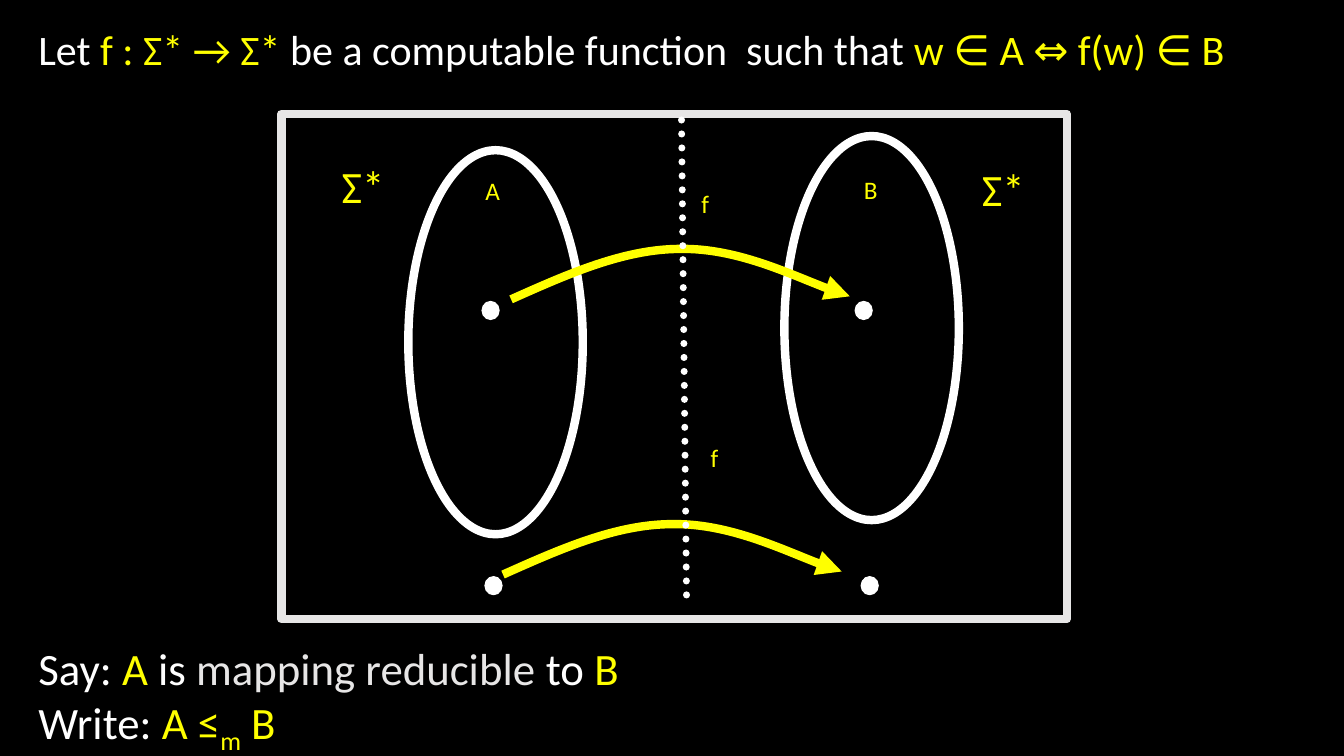
import lxml.etree
import pptx
import pptx.dml.color
import pptx.enum.dml
import pptx.enum.shapes
import pptx.enum.text
import pptx.oxml.ns
import pptx.util

COLORS = {"black": "000000", "white": "FFFFFF", "yellow": "FFFF00", "gray": "E7E6E6"}
FONT = "Calibri"
LINE_WIDTH = 6
DOT_SIZE = (1.28, 2.4)
OVAL_SIZE = (12.98, 50.8)
# Bezier control points of a mapping arrow, relative to its start.
ARC = [(4.2, -3.33), (8.4, -6.67), (12.6, -6.67),
       (16.8, -6.8), (23.1, -1.47), (25.2, -0.4)]
LABEL_FORMAT = {"word_wrap": False}
BLOCK_FORMAT = {
    "word_wrap": True,
    "auto_size": pptx.enum.text.MSO_AUTO_SIZE.NONE,
    "vertical_anchor": pptx.enum.text.MSO_ANCHOR.TOP,
}
LEFT = pptx.enum.text.PP_ALIGN.LEFT
CENTER = pptx.enum.text.PP_ALIGN.CENTER


def rgb(name):
    return pptx.dml.color.RGBColor.from_string(COLORS[name])


def add_element(parent, tag, **attributes):
    element = lxml.etree.SubElement(parent, pptx.oxml.ns.qn(tag))
    for name, value in attributes.items():
        element.set(name, value)
    return element


class MappingSlide:
    """Draws on one slide; lengths are hundredths of its width and height."""

    def __init__(self, presentation):
        self.column = presentation.slide_width / 100
        self.row = presentation.slide_height / 100
        self.slide = presentation.slides.add_slide(presentation.slide_layouts[1])
        self.shapes = self.slide.shapes
        self.slide.background.fill.solid()
        self.slide.background.fill.fore_color.rgb = rgb("black")

    def point(self, x, y):
        return round(x * self.column), round(y * self.row)

    def style_line(self, line, color, width):
        line.color.rgb = rgb(color)
        line.width = pptx.util.Pt(width)

    def fill_text(self, shape, lines, size, alignment, frame_format):
        """Fill a shape with lines of (text, color[, baseline]) runs."""
        frame = shape.text_frame
        for name, value in frame_format.items():
            setattr(frame, name, value)
        paragraph = frame.paragraphs[0]
        paragraph.alignment = alignment
        paragraph.space_before = pptx.util.Pt(0)
        for index, line in enumerate(lines):
            if index:
                paragraph.add_line_break()
            for text, color, *baseline in line:
                run = paragraph.add_run()
                run.text = text
                font_format = {"name": FONT, "size": pptx.util.Pt(size), "bold": False}
                for name, value in font_format.items():
                    setattr(run.font, name, value)
                run.font.color.rgb = rgb(color)
                if baseline:
                    run._r.get_or_add_rPr().set("baseline", str(baseline[0]))
        return paragraph

    def placeholder(self, index, position, size, lines, points):
        shape = self.slide.placeholders[index]
        shape.left, shape.top = self.point(*position)
        shape.width, shape.height = self.point(*size)
        paragraph = self.fill_text(shape, lines, points, LEFT, BLOCK_FORMAT)
        properties = paragraph._p.get_or_add_pPr()
        properties.set("marL", "0")
        properties.set("indent", "0")
        add_element(properties, "a:buNone")

    def label(self, text, position, size, points=18, alignment=CENTER):
        box = self.shapes.add_textbox(*self.point(*position), *self.point(*size))
        self.fill_text(box, [[(text, "yellow")]], points, alignment, LABEL_FORMAT)

    def outline(self, kind, position, size, color="white", width=LINE_WIDTH, fill=None):
        shape = self.shapes.add_shape(kind, *self.point(*position), *self.point(*size))
        shape.shadow.inherit = False
        if fill:
            shape.fill.solid()
            shape.fill.fore_color.rgb = rgb(fill)
        else:
            shape.fill.background()
        self.style_line(shape.line, color, width)

    def arrow(self, x, y):
        """Draw the arc from (x, y) as two Bezier curves with an arrowhead."""
        builder = self.shapes.build_freeform(*self.point(x, y))
        builder.add_line_segments([self.point(x + dx, y + dy) for dx, dy in ARC],
                                  close=False)
        shape = builder.convert_to_shape()
        shape.shadow.inherit = False
        shape.fill.background()
        self.style_line(shape.line, "yellow", LINE_WIDTH)
        add_element(shape.line._get_or_add_ln(), "a:tailEnd", type="triangle")
        segments = list(shape._element.iter(pptx.oxml.ns.qn("a:lnTo")))
        outline = segments[0].getparent()
        for start in range(0, len(segments), 3):
            curve = add_element(outline, "a:cubicBezTo")
            for segment in segments[start:start + 3]:
                curve.append(segment[0])
                outline.remove(segment)

    def divider(self, start, end):
        connector = self.shapes.add_connector(
            pptx.enum.shapes.MSO_CONNECTOR.STRAIGHT,
            *self.point(*start), *self.point(*end))
        self.style_line(connector.line, "white", 5)
        connector.line.dash_style = pptx.enum.dml.MSO_LINE.ROUND_DOT
        connector.line._get_or_add_ln().set("cap", "rnd")
        add_element(connector._element.spPr, "a:effectLst")


def main():
    presentation = pptx.Presentation()
    presentation.slide_width = pptx.util.Inches(13.33)
    presentation.slide_height = pptx.util.Inches(7.5)
    slide = MappingSlide(presentation)
    oval = pptx.enum.shapes.MSO_SHAPE.OVAL
    rectangle = pptx.enum.shapes.MSO_SHAPE.RECTANGLE

    slide.placeholder(0, (2.1, 2.4), (95.6, 7.73), [[
        ("Let ", "white"), ("f : Σ* → Σ* ", "yellow"),
        ("be a computable function  such that ", "white"),
        ("w ∈ A ⇔ f(w) ∈ B", "yellow")]], 30)
    slide.placeholder(1, (2.1, 84.13), (47.3, 14.93), [
        [("Say: ", "white"), ("A", "yellow"), (" is ", "white"),
         ("mapping reducible ", "gray"), ("to ", "white"), ("B", "yellow")],
        [("Write: ", "white"), ("A ≤", "yellow"), ("m", "yellow", -25000),
         (" B", "yellow")]], 32)

    for position in [(30.38, 19.87), (58.36, 18)]:
        slide.outline(oval, position, OVAL_SIZE)
    slide.outline(rectangle, (20.93, 15.07), (58.44, 66.8), "gray")
    slide.label("A", (34.96, 22.53), (3.38, 6.4))
    slide.label("B", (63.17, 22.4), (3.23, 6.4))
    for position in [(35.86, 39.87), (63.62, 39.87), (36.08, 76.27), (64.07, 76.27)]:
        slide.outline(oval, position, DOT_SIZE, width=0.75, fill="white")
    for start in [(38.03, 39.6), (37.43, 76)]:
        slide.arrow(*start)
    for position in [(51.31, 24.27), (51.99, 57.87)]:
        slide.label("f", position, (2.33, 6.4))
    slide.divider((50.71, 15.87), (51.09, 80.4))
    slide.label("Σ*", (24.68, 20.4), (6.3, 8.4), 32, LEFT)
    slide.label("Σ*", (72.32, 20.8), (7.13, 8.4), 32, LEFT)

    presentation.save("out.pptx")


if __name__ == "__main__":
    main()
